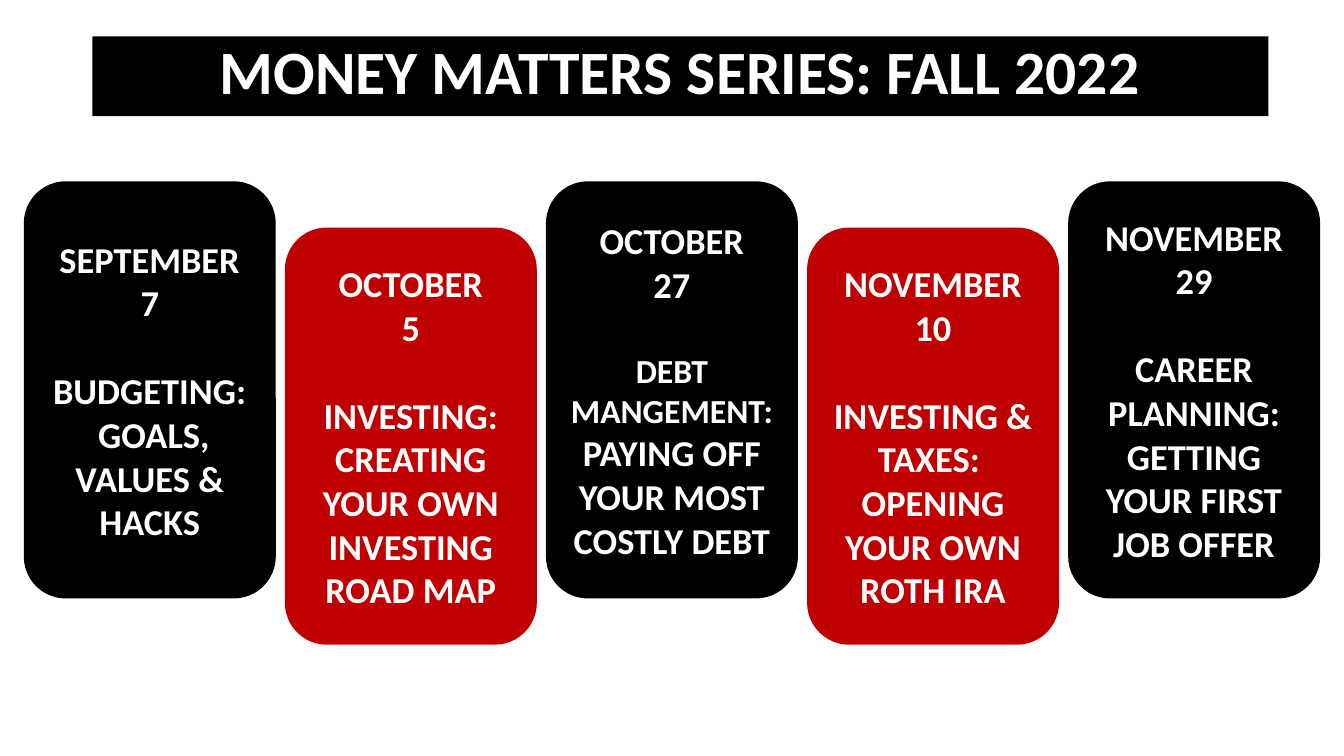
from dataclasses import dataclass

from pptx import Presentation
from pptx.dml.color import RGBColor
from pptx.enum.shapes import MSO_SHAPE as SHAPE
from pptx.enum.text import MSO_ANCHOR as ANCHOR, MSO_AUTO_SIZE as FIT, PP_ALIGN as ALIGN
from pptx.util import Pt


@dataclass(frozen=True)
class Theme:
    """Colours, font and type sizes of the slide."""
    black: RGBColor = RGBColor(0, 0, 0)
    red: RGBColor = RGBColor(0xC0, 0, 0)
    white: RGBColor = RGBColor(0xFF, 0xFF, 0xFF)
    font: str = "Calibri"
    title: float = 44
    card: float = 26
    small: float = 24
    gap: float = 31.7


THEME = Theme()
SESSIONS = [
    (["SEPTEMBER", "7"],
     [[("BUDGETING:", THEME.card)], [(" GOALS, VALUES & HACKS", THEME.card)]]),
    (["OCTOBER", "5"],
     [[("INVESTING:", THEME.card)],
      [("CREATING YOUR OWN INVESTING ROAD MAP", THEME.card)]]),
    (["OCTOBER", "27"],
     [[("DEBT MANGEMENT: ", THEME.small),
       ("PAYING OFF YOUR MOST COSTLY DEBT", THEME.card)]]),
    (["NOVEMBER", "10"],
     [[("INVESTING & TAXES: ", THEME.card)],
      [("OPENING YOUR OWN ROTH IRA", THEME.card)]]),
    (["NOVEMBER", "29"],
     [[("CAREER PLANNING: GETTING YOUR FIRST JOB OFFER", THEME.card)]]),
]


def add_run(p, text, size):
    """Add a bold white run to a centred paragraph."""
    p.alignment = ALIGN.CENTER
    r = p.add_run()
    r.text = text
    r.font.name = THEME.font
    r.font.size = Pt(size)
    r.font.bold = True
    r.font.color.rgb = THEME.white


def add_title(slide, left, top, width, height):
    """Place the title banner in the given box."""
    sp = slide.shapes.title
    sp.left, sp.top, sp.width, sp.height = Pt(left), Pt(top), Pt(width), Pt(height)
    sp.fill.solid()
    sp.fill.fore_color.rgb = THEME.black
    tf = sp.text_frame
    tf.word_wrap = True
    tf.auto_size = FIT.NONE
    tf.vertical_anchor = ANCHOR.TOP
    p = tf.paragraphs[0]
    p.line_spacing = 0.9
    add_run(p, "MONEY MATTERS SERIES: FALL 2022", THEME.title)


def add_card(slide, left, top, width, height, color, date, topic):
    """Place one session card with its date and topic."""
    sp = slide.shapes.add_shape(
        SHAPE.ROUNDED_RECTANGLE, Pt(left), Pt(top), Pt(width), Pt(height))
    sp.shadow.inherit = False
    sp.fill.solid()
    sp.fill.fore_color.rgb = color
    sp.line.fill.background()
    tf = sp.text_frame
    tf.word_wrap = True
    tf.vertical_anchor = ANCHOR.MIDDLE
    p = tf.paragraphs[0]
    month, day = date
    add_run(p, month, THEME.card)
    p.add_line_break()
    add_run(p, day, THEME.card)
    for i, runs in enumerate(topic):
        p = tf.add_paragraph()
        p.space_before = Pt(0 if i else THEME.gap)
        for text, size in runs:
            add_run(p, text, size)


def add_sessions(slide, left, top, width, height, drop=33, gap=6.5):
    """Spread the cards across the box, every second one red and lower."""
    count = len(SESSIONS)
    card_width = (width - gap * (count - 1)) / count
    for i, (date, topic) in enumerate(SESSIONS):
        low = i % 2
        add_card(slide, left + i * (card_width + gap), top + low * drop,
                 card_width, height - drop,
                 THEME.red if low else THEME.black, date, topic)


def main():
    """Build and save the slide."""
    prs = Presentation()
    prs.slide_width, prs.slide_height = Pt(960), Pt(540)
    slide = prs.slides.add_slide(prs.slide_layouts[5])
    add_title(slide, 66, 26, 840, 57)
    add_sessions(slide, 17, 129.5, 926, 331)
    prs.save("out.pptx")


if __name__ == "__main__":
    main()
